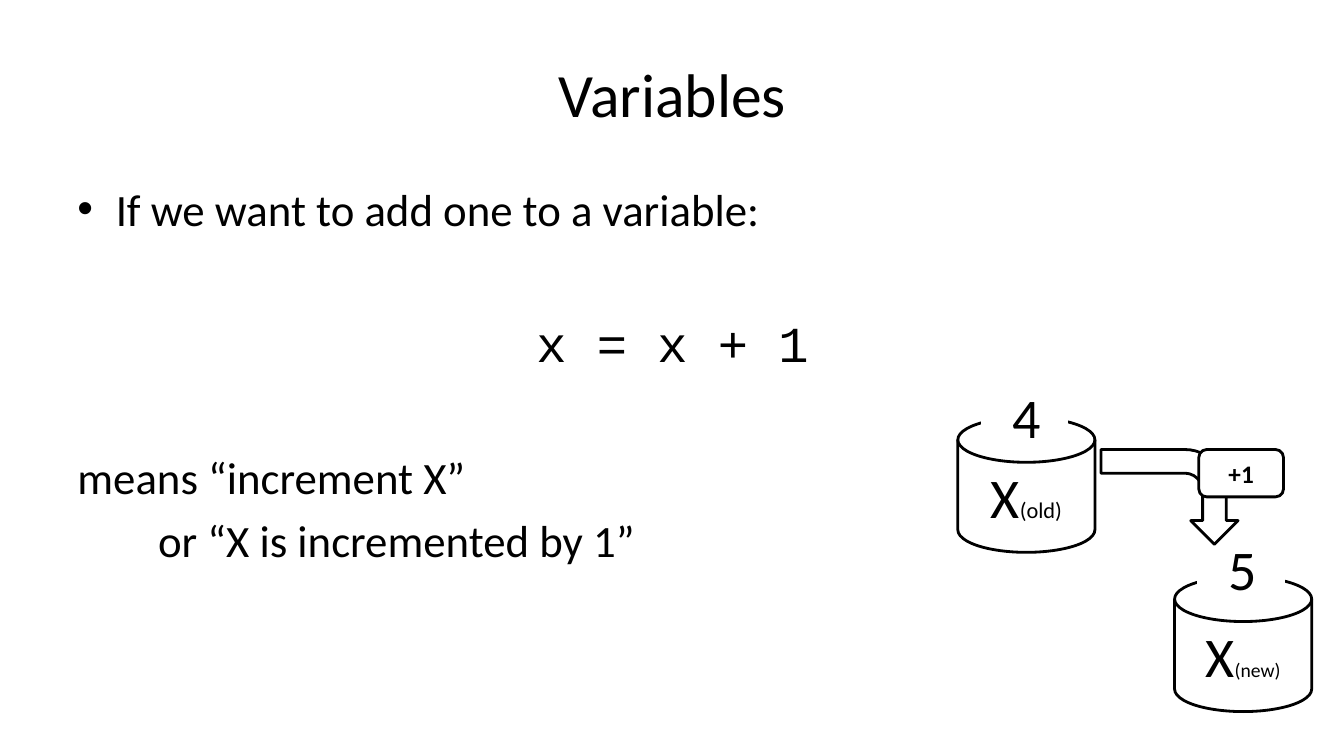
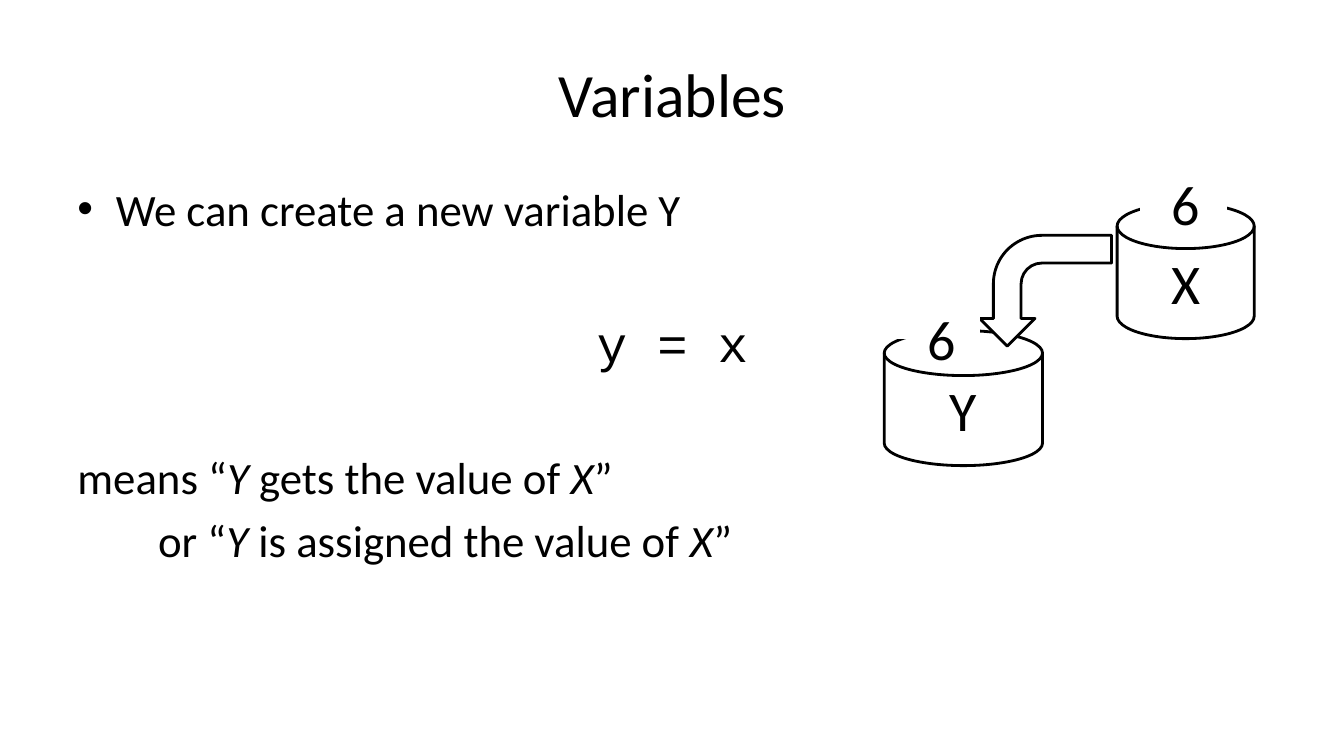
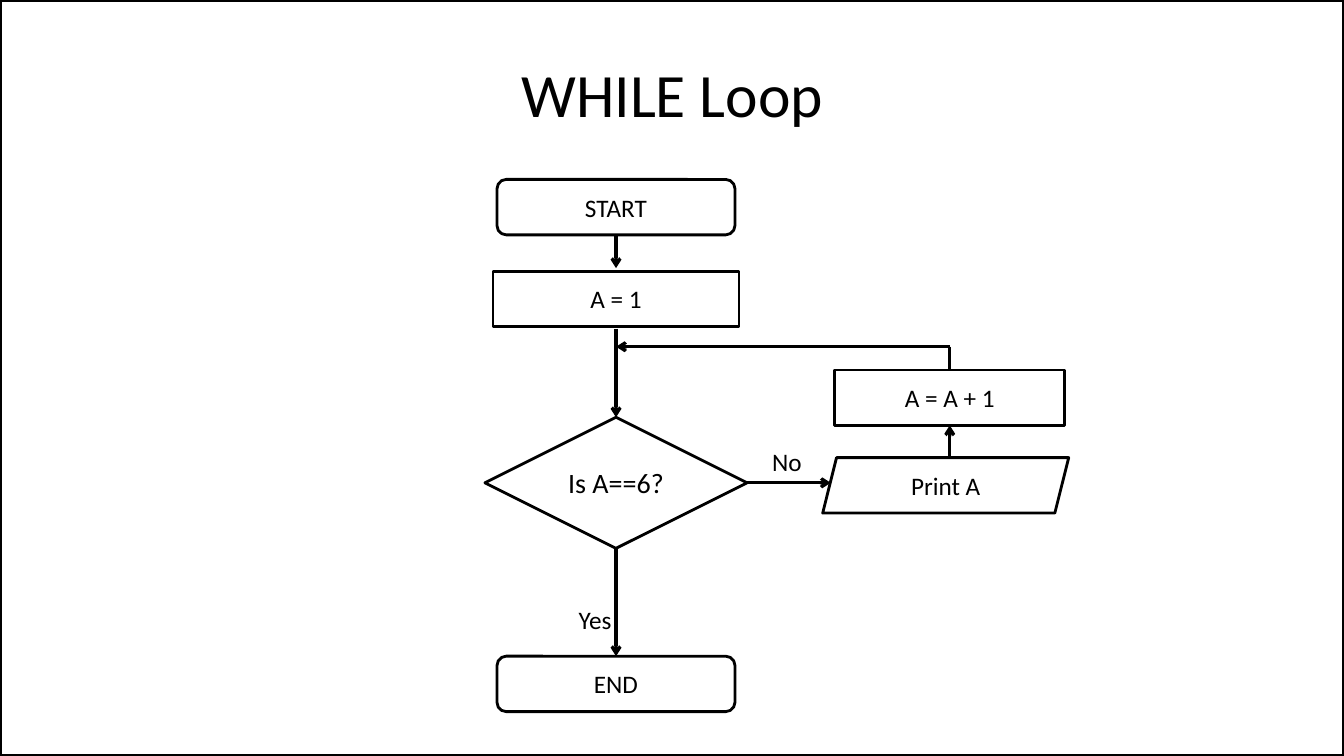
from lxml import etree
from pptx import Presentation
from pptx.dml.color import RGBColor
from pptx.enum.shapes import MSO_CONNECTOR, MSO_SHAPE
from pptx.enum.text import MSO_ANCHOR, PP_ALIGN
from pptx.oxml.ns import qn
from pptx.util import Inches, Pt

BLACK = RGBColor(0x00, 0x00, 0x00)
WHITE = RGBColor(0xFF, 0xFF, 0xFF)
FONT, CODE_FONT = "Calibri", "Courier New"
COLS, ROWS = 133.3, 75
CELL = Inches(0.1)
DISK = MSO_SHAPE.FLOWCHART_MAGNETIC_DISK
BENT_ARROW = MSO_SHAPE.BENT_ARROW
RECT, ROUND = MSO_SHAPE.RECTANGLE, MSO_SHAPE.ROUNDED_RECTANGLE
DIAMOND, SLANTED = MSO_SHAPE.DIAMOND, MSO_SHAPE.PARALLELOGRAM
STRAIGHT = MSO_CONNECTOR.STRAIGHT
LEFT, CENTER = PP_ALIGN.LEFT, PP_ALIGN.CENTER
TOP, MIDDLE = MSO_ANCHOR.TOP, MSO_ANCHOR.MIDDLE
SIDE_TOP, SIDE_BOTTOM, SIDE_RIGHT = 0, 2, 3
DISK_W, DISK_H = 13.6, 13.4
COVER_W, COVER_H = 8.4, 4.7
STEP_H = 5.5


def grid(*cells):
    """Turn grid cells into slide lengths."""
    return [round(c * CELL) for c in cells]


def inside(box, x, y, w=0, h=0):
    """Shift a part from its region onto the slide grid."""
    return box[0] + x, box[1] + y, w, h


def add_run(p, text, size, **fmt):
    """Add one run of text with its format."""
    r = p.add_run()
    r.text = text
    r.font.color.rgb = BLACK
    for name, value in {"name": FONT, "size": Pt(size), **fmt}.items():
        setattr(r.font, name, value)


def add_text(s, box, text, size, align=LEFT, anchor=TOP):
    """Add a wrapped text box of one paragraph."""
    tf = s.shapes.add_textbox(*grid(*box)).text_frame
    tf.word_wrap, tf.vertical_anchor = True, anchor
    p = tf.paragraphs[0]
    p.alignment = align
    add_run(p, text, size)
    return tf


def add_part(s, kind, box, runs=(), fill=None, line=BLACK, width=2):
    """Add a flat preset shape with centred runs of (text, size, format)."""
    sp = s.shapes.add_shape(kind, *grid(*box))
    sp.shadow.inherit = False
    if fill is None:
        sp.fill.background()
    else:
        sp.fill.solid()
        sp.fill.fore_color.rgb = fill
    if line is None:
        sp.line.fill.background()
    else:
        sp.line.color.rgb = line
        sp.line.width = Pt(width)
    tf = sp.text_frame
    tf.vertical_anchor = MIDDLE
    p = tf.paragraphs[0]
    p.alignment = CENTER
    for text, size, fmt in runs:
        add_run(p, text, size, **fmt)
    return sp


def add_link(s, start, end, begin=None, finish=None, head=True):
    """Draw a line between points, joined to any (shape, side) given."""
    cx = s.shapes.add_connector(STRAIGHT, *grid(*start[:2], *end[:2]))
    if begin:
        cx.begin_connect(*begin)
    if finish:
        cx.end_connect(*finish)
    cx.line.color.rgb = BLACK
    cx.line.width = Pt(2.25)
    if head:
        etree.SubElement(cx.line._get_or_add_ln(), qn("a:tailEnd"), type="arrow")
    etree.SubElement(cx._element.spPr, qn("a:effectLst"))


def add_title(s, text):
    """Place the slide title in the shared title band."""
    add_text(s, (6.7, 3, 120, 12.5), text, 44, CENTER, MIDDLE)


def add_body(s, box, intro, code, meaning, other):
    """Place a bullet, a centred code line and two readings of it."""
    tf = add_text(s, box, intro, 32)
    pPr = tf.paragraphs[0]._p.get_or_add_pPr()
    pPr.set("marL", str(Inches(0.38)))
    pPr.set("indent", str(-Inches(0.38)))
    etree.SubElement(pPr, qn("a:buFont"), typeface="Arial")
    etree.SubElement(pPr, qn("a:buChar"), char="•")
    p = tf.add_paragraph()
    p.alignment, p.space_before = CENTER, Pt(55)
    add_run(p, code, 36, name=CODE_FONT)
    for text, gap, margin in ((meaning, 55, 0), (other, 6.4, 0.8)):
        p = tf.add_paragraph()
        p.space_before = Pt(gap)
        p._p.get_or_add_pPr().set("marL", str(Inches(margin)))
        for i, piece in enumerate(text.split("*")):
            add_run(p, piece, 32, italic=i % 2 == 1)


def add_variable(s, box, name, note="", note_size=16):
    """Draw a named container."""
    runs = [(name, 40, {})]
    if note:
        runs.append((note, note_size, {}))
    add_part(s, DISK, box, runs)


def add_value(s, box, value, cover=(2.4, -2.4), shift=(0, -7.9)):
    """Open the top of a container and set its value there."""
    add_part(s, RECT, inside(box, *cover, COVER_W, COVER_H), fill=WHITE, line=WHITE)
    add_part(s, DISK, inside(box, *shift, DISK_W, DISK_H),
             [(value, 40, {})], line=None)


def add_bent_arrow(s, box, flip=False):
    """Draw a bent arrow that points down."""
    sp = add_part(s, BENT_ARROW, box, fill=WHITE)
    sp.rotation = 90
    if flip:
        sp._element.spPr.xfrm.set("flipV", "1")


def add_increment(s, box):
    """Show the old value passing through +1 into the new one."""
    new = inside(box, 21.5, 23.6, DISK_W, DISK_H)
    old = inside(box, 0, 7.8, DISK_W, DISK_H)
    add_variable(s, new, "X", "(new)", 14)
    add_value(s, new, "5", shift=(0, -8.7))
    add_variable(s, old, "X", "(old)")
    add_value(s, old, "4")
    add_bent_arrow(s, inside(box, 16.3, 8.9, 9.4, 13.6))
    add_part(s, ROUND, inside(box, 23.9, 11, COVER_W, COVER_H),
             [("+1", 18, {"bold": True})], fill=WHITE)


def add_assignment(s, box):
    """Show the value of X copied into Y."""
    target = inside(box, 1.1, 20.5, 15.7, DISK_H)
    source = inside(box, 24.2, 7.9, DISK_W, DISK_H)
    add_variable(s, target, "Y")
    add_bent_arrow(s, inside(box, 11.6, 10, 11, 13.1), flip=True)
    add_variable(s, source, "X")
    add_value(s, source, "6")
    add_value(s, target, "6", cover=(1, -4), shift=(-1.1, -7.1))


def add_flowchart(s, box):
    """Draw the loop, with steps centred on a main and a side axis."""
    main, side, back = 13.1, 46.2, 16.6

    def step(kind, axis, y, w, text, h=STEP_H, size=18):
        return add_part(s, kind, inside(box, axis - w / 2, y, w, h), [(text, size, {})])

    def at(x, y):
        return inside(box, x, y)

    start = step(ROUND, main, 0, 23.6, "START")
    end = step(ROUND, main, 47.3, 23.6, "END")
    test = step(DIAMOND, main, 23.6, 26, "Is A==6?", 13, 20)
    step(SLANTED, main, 9.1, 24.4, "A = 1").adjustments[0] = 0
    step(SLANTED, side - 0.4, 27.6, 24.4, "Print A")
    count = step(RECT, side, 18.9, 22.8, "A = A + 1")
    add_text(s, inside(box, 27.6, 26, 6.3, 4), "No", 18)
    add_text(s, inside(box, 8.4, 41.7, 10.2, 4), "Yes", 18)
    add_link(s, at(main, 5.5), at(main, 8.8), begin=(start, SIDE_BOTTOM))
    add_link(s, at(main, 14.8), at(main, 23.6), finish=(test, SIDE_TOP))
    add_link(s, at(26.1, 30.1), at(34.4, 30.1), begin=(test, SIDE_RIGHT))
    add_link(s, at(main, 36.6), at(main, 47.3), (test, SIDE_BOTTOM), (end, SIDE_TOP))
    add_link(s, at(side, 27.6), at(side, 24.4), finish=(count, SIDE_BOTTOM))
    add_link(s, at(side, back), at(side, 18.9), finish=(count, SIDE_TOP), head=False)
    add_link(s, at(side, back), at(main, back))


def main():
    """Build the three slides and save them."""
    prs = Presentation()
    prs.slide_width, prs.slide_height = grid(COLS, ROWS)
    blank = prs.slide_layouts[6]
    body = (6.7, 17.5, 120, 49.5)

    s = prs.slides.add_slide(blank)
    add_title(s, "Variables")
    add_body(s, body, "If we want to add one to a variable:", "x = x + 1",
             "means “increment X”", "or “X is incremented by 1”")
    add_increment(s, (95, 33.6))

    s = prs.slides.add_slide(blank)
    add_title(s, "Variables")
    add_body(s, body, "We can create a new variable Y", "y = x",
             "means “*Y* gets the value of *X*”",
             "or “*Y* is assigned the value of *X*”")
    add_assignment(s, (86.6, 12.3))

    s = prs.slides.add_slide(blank)
    add_title(s, "WHILE Loop")
    add_part(s, RECT, (0, 0, COLS, ROWS), width=3)
    add_flowchart(s, (48, 17.8))

    prs.save("out.pptx")


if __name__ == "__main__":
    main()
